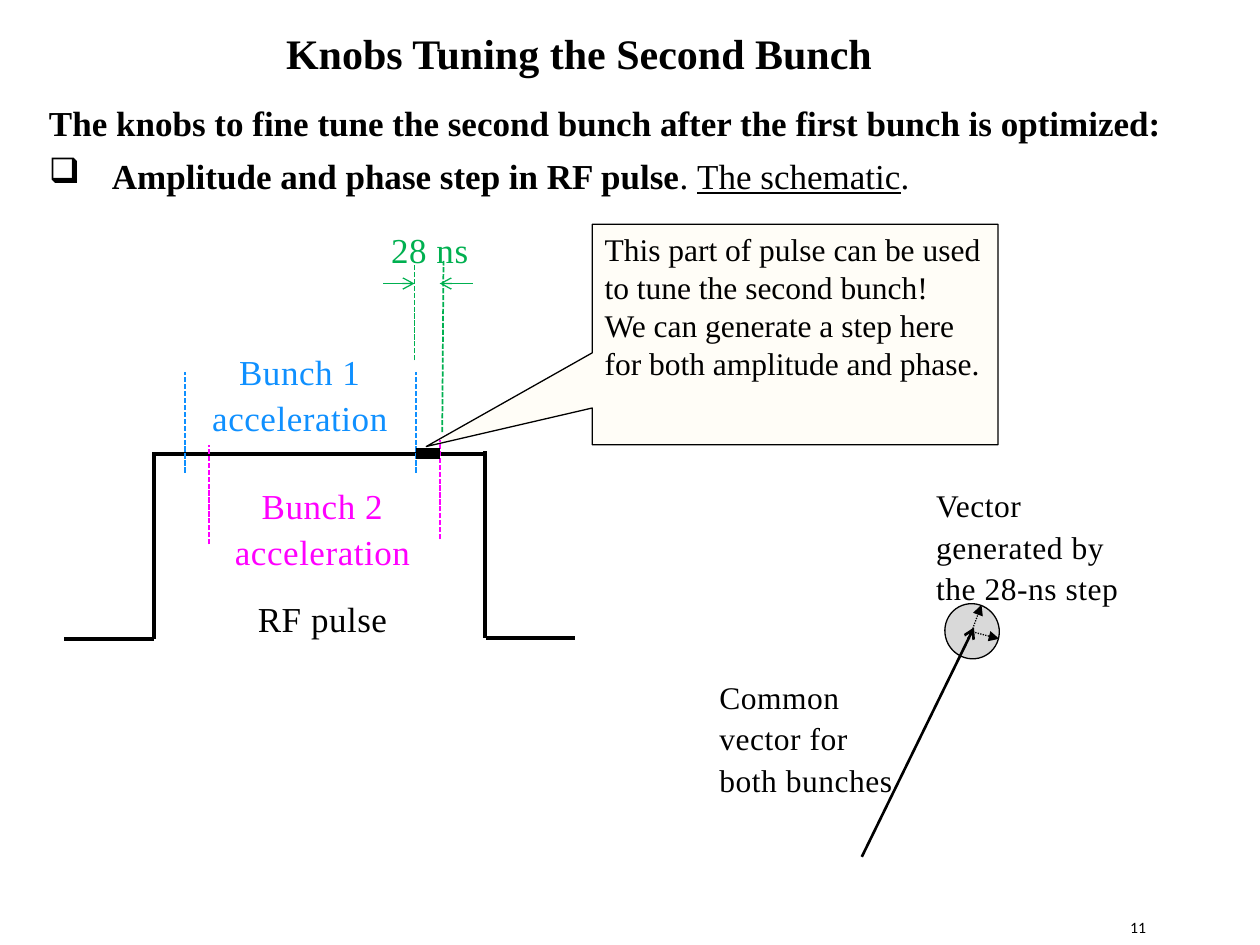
from lxml.etree import SubElement
from pptx import Presentation
from pptx.dml.color import RGBColor
from pptx.enum.dml import MSO_LINE
from pptx.enum.shapes import MSO_CONNECTOR, MSO_SHAPE
from pptx.enum.text import MSO_ANCHOR, PP_ALIGN
from pptx.oxml.ns import qn
from pptx.util import Inches, Pt

CELL = Inches(0.1)  # the slide is a grid of 100 columns by 75 rows
COLUMNS, ROWS = 100, 75
BLACK, WHITE, GREY, CREAM = "000000", "FFFFFF", "D9D9D9", "FFFDF7"
BLUE, MAGENTA, GREEN = "0F90FF", "FF00FF", "00B050"
SERIF = "Times New Roman"
colour = RGBColor.from_string


def cells(*counts):
    """Turn counts of grid cells into lengths."""
    return [round(CELL * count) for count in counts]


def write(box, paragraphs, size, ink, inset=True, align=PP_ALIGN.LEFT, tracking=0, name=SERIF):
    """Fill a box with paragraphs, each a list of (text, font values)."""
    frame = box.text_frame
    frame.word_wrap, frame.vertical_anchor = True, MSO_ANCHOR.TOP
    if not inset:
        for side in ("left", "top", "right", "bottom"):
            setattr(frame, f"margin_{side}", 0)
    for number, spans in enumerate(paragraphs):
        para = frame.add_paragraph() if number else frame.paragraphs[0]
        para.alignment = align
        if tracking:
            para.line_spacing = 1.1
        for text, values in spans:
            span = para.add_run()
            span.text = text
            for key, value in {"name": name, "size": Pt(size), **values}.items():
                setattr(span.font, key, value)
            span.font.color.rgb = colour(ink)
            if tracking:
                span._r.get_or_add_rPr().set("spc", str(tracking))
    return frame.paragraphs


deck = Presentation()
deck.slide_width, deck.slide_height = cells(COLUMNS, ROWS)
page = deck.slides.add_slide(deck.slide_layouts[5])

# Title, page number and heading
bold = {"bold": True}
title = page.shapes.title
title.left, title.top, title.width, title.height = cells(21.7, 1.7, 75.3, 5)
write(title, [[("Knobs Tuning the Second Bunch", bold)]], 24, BLACK)

page_number = page.shapes.add_textbox(*cells(89.7, 72.8, 6.3, 2.2))
write(page_number, [[("11", {})]], 9, BLACK, inset=False, name="Calibri")

heading = page.shapes.add_textbox(*cells(2.9, 7.6, 94.1, 8.6))
heading.fill.solid()
heading.fill.fore_color.rgb = colour(WHITE)
intro, knob = write(heading, [
    [("The knobs to fine tune the second bunch after the first bunch is optimized:", bold)],
    [("Amplitude and phase step in RF pulse", bold), (". ", {}),
     ("The schematic", {"underline": True}), (".", {})],
], 20, BLACK)
knob.space_before = Pt(6)
properties = knob._p.get_or_add_pPr()
properties.set("marL", str(Inches(0.5)))
properties.set("indent", str(-Inches(0.5)))
SubElement(properties, qn("a:buChar"), char="❑")

# Two groups: the RF pulse and the vector diagram
pulse = page.shapes.add_group_shape().shapes
vectors = page.shapes.add_group_shape().shapes

step_circle = vectors.add_shape(MSO_SHAPE.OVAL, *cells(75, 47.9, 4.3, 4.4))
step_circle.rotation = 331.5
callout = pulse.add_shape(MSO_SHAPE.RECTANGULAR_CALLOUT, *cells(47, 17.8, 32.2, 17.5))
callout.adjustments[0], callout.adjustments[1] = -0.909, 0.508
for shape, fill in ((step_circle, GREY), (callout, CREAM)):
    shape.shadow.inherit = False
    shape.fill.solid()
    shape.fill.fore_color.rgb = colour(fill)
    shape.line.color.rgb = colour(BLACK)
    shape.line.width = Pt(0.75)
write(callout, [
    [("This part of pulse can be used to tune the second bunch!", {})],
    [("We can generate a step here for both amplitude and phase.", {})],
], 18, BLACK)

# Lines: style, then start column and row, end column and row
DASH, DOT = MSO_LINE.SQUARE_DOT, MSO_LINE.ROUND_DOT
line_sets = [
    (pulse, BLACK, 2.25, None, None, [
        (5.1, 50.7, 12.2, 50.7), (12.2, 50.7, 12.2, 35.9), (12.2, 36, 38.3, 36),
        (38.5, 50.6, 38.5, 35.8), (38.6, 50.6, 45.6, 50.6)]),
    (pulse, BLUE, 1, DASH, None, [(14.7, 37.5, 14.7, 29.5), (33, 37.5, 33, 29.5)]),
    (pulse, MAGENTA, 1, DASH, None, [(16.6, 43.2, 16.6, 35.3), (34.9, 42.8, 34.9, 34.9)]),
    (pulse, GREEN, 1, DASH, None, [(32.9, 28.6, 32.9, 20.7), (35.1, 34.3, 35.2, 20.7)]),
    (pulse, GREEN, 0.75, None, "arrow", [(30.4, 22.5, 32.9, 22.5), (37.5, 22.5, 34.9, 22.5)]),
    (pulse, BLACK, 6, None, None, [(33, 36, 34.9, 36)]),
    (vectors, BLACK, 1.5, None, "arrow", [(68.4, 68, 77.3, 49.8)]),
    (vectors, BLACK, 0.75, DOT, "triangle", [(77.2, 49.9, 77.9, 48), (77, 50.1, 79.3, 50.7)]),
]
for group, ink, width, dash, arrowhead, lines in line_sets:
    for ends in lines:
        line = group.add_connector(MSO_CONNECTOR.STRAIGHT, *cells(*ends))
        line.line.color.rgb = colour(ink)
        line.line.width = Pt(width)
        if dash:
            line.line.dash_style = dash
        if arrowhead:
            SubElement(line.line._get_or_add_ln(), qn("a:tailEnd"), type=arrowhead)
        SubElement(line._element.spPr, qn("a:effectLst"))

# Labels
CENTRE, LEFT = PP_ALIGN.CENTER, PP_ALIGN.LEFT
labels = [
    (pulse, "RF pulse", (18.5, 47.1, 14.2, 4.7), 20, BLACK, CENTRE),
    (pulse, "Bunch 1 acceleration", (16.7, 27.5, 14.2, 4.7), 20, BLUE, CENTRE),
    (pulse, "Bunch 2 acceleration", (18.5, 38.1, 14.2, 4.7), 20, MAGENTA, CENTRE),
    (pulse, "28 ns", (29.5, 17.8, 9.2, 2.9), 20, GREEN, CENTRE),
    (vectors, "Common vector for both bunches", (57.1, 53.5, 15, 8), 18, BLACK, LEFT),
    (vectors, "Vector generated by the 28-ns step", (74.3, 38.3, 15.5, 8), 18, BLACK, LEFT),
]
for group, text, place, size, ink, align in labels:
    label = group.add_textbox(*cells(*place))
    write(label, [[(text, {})]], size, ink, inset=False, align=align, tracking=30)

deck.save("out.pptx")
